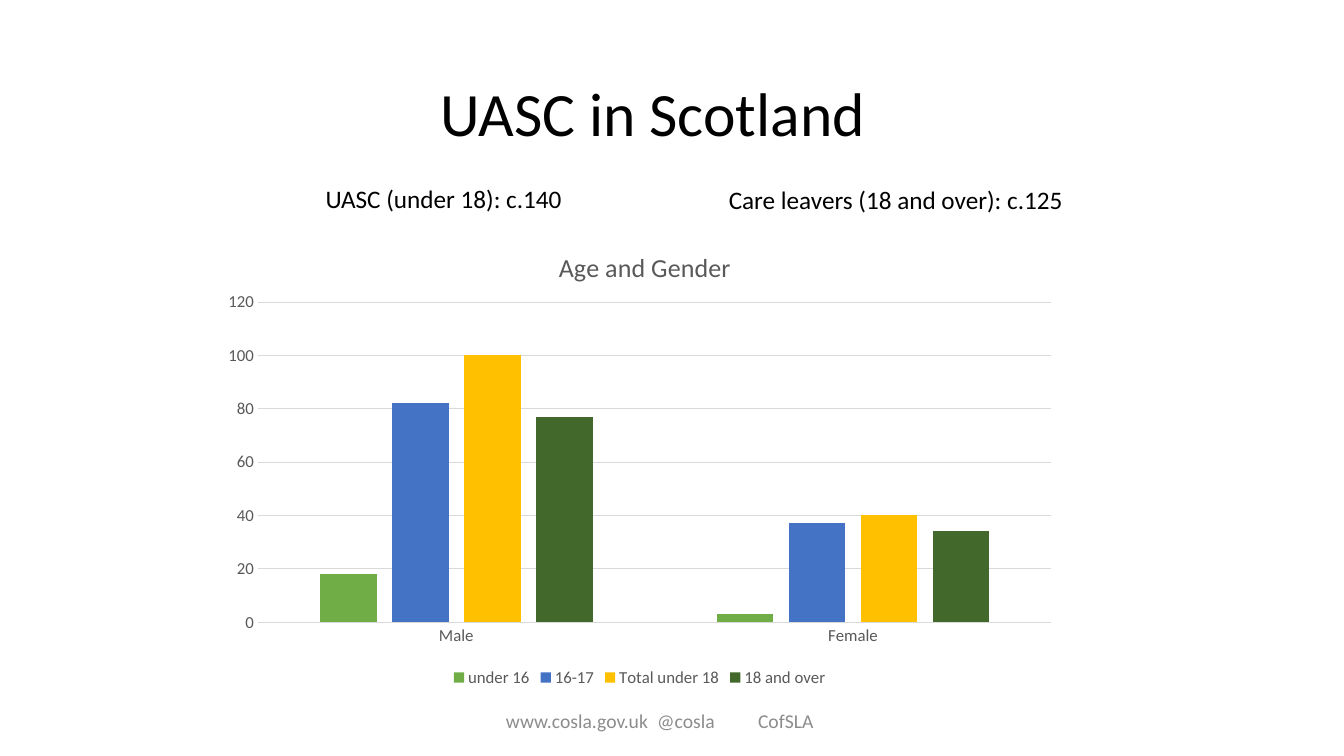
"""Build the UASC in Scotland slide with its age and gender chart."""
from lxml import etree
from pptx import Presentation
from pptx.chart.data import CategoryChartData
from pptx.dml.color import RGBColor
from pptx.enum.chart import XL_CHART_TYPE, XL_LEGEND_POSITION, XL_TICK_MARK
from pptx.enum.text import MSO_ANCHOR
from pptx.oxml import parse_xml
from pptx.oxml.ns import nsdecls, qn
from pptx.util import Inches, Pt

COLUMNS = XL_CHART_TYPE.COLUMN_CLUSTERED
BOTTOM = XL_LEGEND_POSITION.BOTTOM
NO_TICK = XL_TICK_MARK.NONE
TOP, MIDDLE = MSO_ANCHOR.TOP, MSO_ANCHOR.MIDDLE

FONT = "Calibri"
BLACK, GREY, FOOTER_GREY, RULE = "000000", "595959", "8C8C8C", "D9D9D9"

TEXTS = [
    ("UASC in Scotland", (4.27, 0.53, 8.5, 1.25), 44, BLACK, MIDDLE, 0.9),
    ("UASC (under 18): c.140", (3.13, 1.77, 3.79, 0.5), 18, BLACK, TOP, 1),
    ("Care leavers (18 and over): c.125", (7.13, 1.78, 4.64, 0.4), 18, BLACK, TOP, 1),
]
FOOTER = ["www.cosla.gov.uk", "@cosla", "CofSLA"]
FOOTER_AREA = (4.42, 6.95, 4.5, 0.4)
FOOTER_STOPS = [0.5, 2.32, 3.23]

CHART_TITLE = "Age and Gender"
CHART_AREA = (2.1, 2.19, 8.49, 4.67)
CATEGORIES = ["Male", "Female"]
SERIES = [
    ("under 16", (18, 3), "70AD47"),
    ("16-17", (82, 37), "4472C4"),
    ("Total under 18", (100, 40), "FFC000"),
    ("18 and over", (77, 34), "43682B"),
]
TITLE_PLACE = {"x": 0.4, "y": 0.05}
PLOT_PLACE = {"x": 0.054, "y": 0.173, "w": 0.927, "h": 0.68}


def color(hex_code):
    return RGBColor.from_string(hex_code)


def style(font, size, hex_code):
    font.name, font.size, font.bold = FONT, Pt(size), False
    font.color.rgb = color(hex_code)


def add_text(page, text, area, size, hex_code, anchor, spacing=1):
    box = page.shapes.add_textbox(*map(Inches, area))
    frame = box.text_frame
    frame.word_wrap = True
    frame.vertical_anchor = anchor
    para = frame.paragraphs[0]
    para.text = text
    para.line_spacing = spacing
    return para


def add_footer(page):
    para = add_text(page, "\t".join(FOOTER), FOOTER_AREA, 14, FOOTER_GREY, MIDDLE)
    indent, *stops = FOOTER_STOPS
    properties = para._p.get_or_add_pPr()
    properties.set("marL", str(Inches(indent)))
    properties.set("indent", "0")
    tabs = etree.SubElement(properties, qn("a:tabLst"))
    for stop in stops:
        etree.SubElement(tabs, qn("a:tab"), pos=str(Inches(stop)), algn="l")
    style(para.font, 14, FOOTER_GREY)


def place(element, fractions, inner=False):
    """Give a chart part a fixed place, in fractions of the chart."""
    for old in element.findall(qn("c:layout")):
        element.remove(old)
    target = '<c:layoutTarget val="inner"/>' if inner else ""
    modes = "".join(f'<c:{key}Mode val="edge"/>' for key in "xy")
    values = "".join(f'<c:{key} val="{value}"/>' for key, value in fractions.items())
    layout = parse_xml(
        f'<c:layout {nsdecls("c")}><c:manualLayout>{target}{modes}{values}'
        "</c:manualLayout></c:layout>")
    element.insert(0 if inner else 1, layout)


def add_age_chart(page):
    data = CategoryChartData()
    data.categories = CATEGORIES
    for name, values, _ in SERIES:
        data.add_series(name, values)
    chart = page.shapes.add_chart(COLUMNS, *map(Inches, CHART_AREA), data).chart
    style(chart.font, 10, BLACK)

    title = chart.chart_title
    title.text_frame.text = CHART_TITLE
    style(title.text_frame.paragraphs[0].font, 18.6, GREY)
    title.include_in_layout = False
    place(title._element, TITLE_PLACE)

    plot = chart.plots[0]
    plot.gap_width, plot.overlap, plot.vary_by_categories = 219, -27, False
    for series, (_, _, hex_code) in zip(plot.series, SERIES):
        series.format.fill.solid()
        series.format.fill.fore_color.rgb = color(hex_code)
    place(chart._chartSpace.chart.plotArea, PLOT_PLACE, inner=True)

    for axis in (chart.category_axis, chart.value_axis):
        axis.major_tick_mark = axis.minor_tick_mark = NO_TICK
        style(axis.tick_labels.font, 12, GREY)
    scale = chart.value_axis
    scale.minimum_scale, scale.maximum_scale, scale.major_unit = 0, 120, 20
    scale.format.line.fill.background()
    for rule in (chart.category_axis.format.line, scale.major_gridlines.format.line):
        rule.color.rgb = color(RULE)
        rule.width = Pt(0.75)

    chart.has_legend = True
    chart.legend.position = BOTTOM
    chart.legend.include_in_layout = False
    style(chart.legend.font, 12, GREY)


def main():
    deck = Presentation()
    deck.slide_width, deck.slide_height = Inches(13.33), Inches(7.5)
    page = deck.slides.add_slide(deck.slide_layouts[6])
    add_footer(page)
    add_age_chart(page)
    for text, area, size, hex_code, anchor, spacing in TEXTS:
        para = add_text(page, text, area, size, hex_code, anchor, spacing)
        style(para.font, size, hex_code)
    deck.save("out.pptx")


if __name__ == "__main__":
    main()
